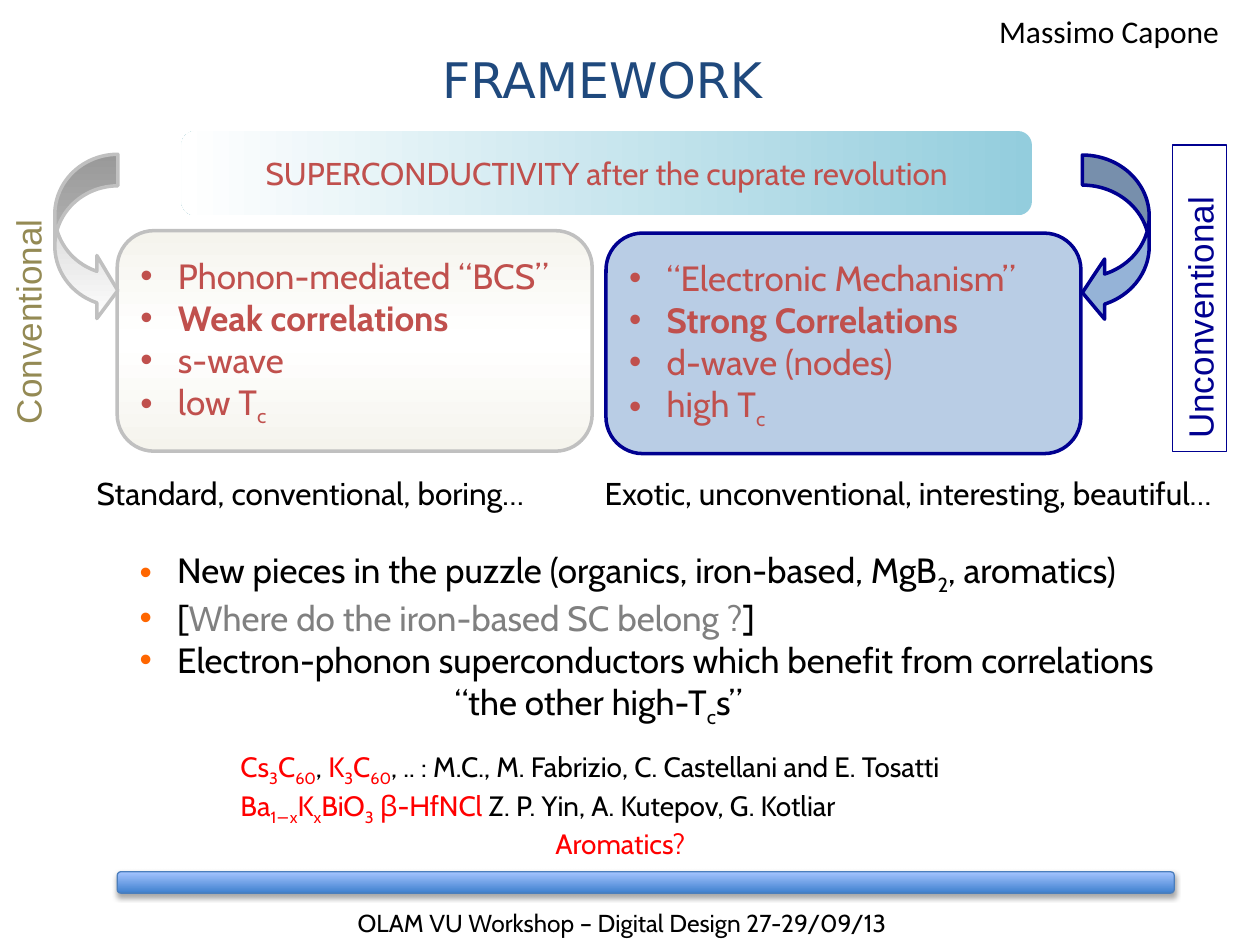
"""Build the superconductivity framework slide."""
from pptx import Presentation, oxml, util as u
from pptx.dml.color import RGBColor
from pptx.enum import shapes, text
from pptx.oxml import ns

Pt = u.Pt
KIND = shapes.MSO_SHAPE
BLACK = RGBColor(0x00, 0x00, 0x00)
WHITE = RGBColor(0xFF, 0xFF, 0xFF)
RED = RGBColor(0xFF, 0x00, 0x00)
BRICK = RGBColor(0xC0, 0x50, 0x4D)
ORANGE = RGBColor(0xFF, 0x66, 0x00)
GRAY = RGBColor(0x80, 0x80, 0x80)
SILVER = RGBColor(0xC0, 0xC0, 0xC0)
CREAM = RGBColor(0xF5, 0xF4, 0xED)
OLIVE = RGBColor(0x94, 0x8A, 0x54)
NAVY = RGBColor(0x00, 0x00, 0x90)
TITLE = RGBColor(0x1F, 0x49, 0x7D)
PALE = RGBColor(0xB9, 0xCD, 0xE5)
STEEL = RGBColor(0x95, 0xB3, 0xD7)
AQUA = RGBColor(0x93, 0xCD, 0xDD)
DEEP = RGBColor(0x3F, 0x80, 0xCE)
LIGHT = RGBColor(0xA4, 0xC4, 0xFF)
EDGE = RGBColor(0x4B, 0x7E, 0xBC)


def write(shape, lines, size=18, font="Cabin", color=BLACK, accent=RED, dot=None,
          align=text.PP_ALIGN.LEFT, anchor=text.MSO_ANCHOR.TOP, wrap=True):
    """Write lines: ~sub~, |accent|, leading * for bold, leading > for an indent."""
    frame = shape.text_frame
    frame.word_wrap, frame.vertical_anchor = wrap, anchor
    frame.auto_size = text.MSO_AUTO_SIZE.NONE if wrap else text.MSO_AUTO_SIZE.SHAPE_TO_FIT_TEXT
    for n, line in enumerate(lines):
        para = frame.add_paragraph() if n else frame.paragraphs[0]
        para.alignment = align
        props = para._p.get_or_add_pPr()
        if line.startswith(">"):
            props.set("marL", str(Pt(180)))
        elif dot:
            props.set("marL", str(Pt(21.5)))
            props.set("indent", str(-Pt(21.5)))
            for tag in (f'buClr {ns.nsdecls("a")}><a:srgbClr val="{dot}"/></a:buClr>',
                        f'buFont {ns.nsdecls("a")} typeface="Arial"/>',
                        f'buChar {ns.nsdecls("a")} char="•"/>'):
                props.append(oxml.parse_xml("<a:" + tag))
        for i, part in enumerate(line.lstrip("*>").split("|")):
            for j, bit in enumerate(part.split("~")):
                if bit:
                    run = para.add_run()
                    run.text = bit
                    run.font.size, run.font.name = Pt(size), font
                    run.font.bold = line.startswith("*")
                    run.font.color.rgb = accent if i % 2 else color
                    if j % 2:
                        run._r.get_or_add_rPr().set("baseline", "-25000")


def draw(kind, box, fill=None, angle=0, line=None, width=2, turn=0, adj=()):
    """Add a preset shape; a list of colours makes an even gradient."""
    shape = slide.shapes.add_shape(kind, *map(Pt, box))
    shape.shadow.inherit = False
    shape.rotation = turn
    for n, value in enumerate(adj):
        shape.adjustments[n] = value
    if isinstance(fill, list):
        stops = "".join(f'<a:gs pos="{100000 * n // (len(fill) - 1)}"><a:srgbClr val="{c}"/></a:gs>'
                        for n, c in enumerate(fill))
        shape._element.spPr.prstGeom.addnext(oxml.parse_xml(
            f'<a:gradFill {ns.nsdecls("a")} rotWithShape="0"><a:gsLst>{stops}</a:gsLst>'
            f'<a:lin ang="{angle * 60000}" scaled="0"/></a:gradFill>'))
    elif fill:
        shape.fill.solid()
        shape.fill.fore_color.rgb = fill
    else:
        shape.fill.background()
    if line:
        shape.line.color.rgb, shape.line.width = line, Pt(width)
    else:
        shape.line.fill.background()
    return shape


deck = Presentation()
deck.slide_width, deck.slide_height = Pt(720), Pt(540)
slide = deck.slides.add_slide(deck.slide_layouts[5])
MID = text.MSO_ANCHOR.MIDDLE

head = slide.shapes.title
head.left, head.top, head.width, head.height = map(Pt, (245.5, 15, 201.6, 60))
write(head, ["FRAMEWORK"], size=28, font="DejaVu Sans", color=TITLE, anchor=MID)

bar = draw(KIND.FLOWCHART_ALTERNATE_PROCESS, (67, 498.2, 604, 12.2), [DEEP, LIGHT], 270, EDGE, 0.75)
bar._element.spPr.find(ns.qn("a:effectLst")).append(oxml.parse_xml(
    f'<a:outerShdw {ns.nsdecls("a")} blurRad="{Pt(3.1)}" dist="{Pt(1.8)}" dir="5400000" '
    'rotWithShape="0"><a:srgbClr val="000000"><a:alpha val="35000"/></a:srgbClr></a:outerShdw>'))

banner = draw(KIND.ROUNDED_RECTANGLE, (103.7, 74.9, 486, 48.2), [AQUA, WHITE], 180)
write(banner, ["SUPERCONDUCTIVITY after the cuprate revolution"], color=BRICK,
      align=text.PP_ALIGN.CENTER, anchor=MID)

camps = [
    (67, 131.8, [CREAM, WHITE, CREAM], SILVER,
     ["Phonon-mediated “BCS”", "*Weak correlations", "s-wave", "low T~c~"]),
    (346.3, 133.2, PALE, NAVY,
     ["“Electronic Mechanism”", "*Strong Correlations", "d-wave (nodes)", "high T~c~"]),
]
for left, top, fill, line, lines in camps:
    panel = draw(KIND.ROUNDED_RECTANGLE, (left, top, 271.4, 126), fill, 90, line)
    write(panel, lines, size=20, color=BRICK, dot=BRICK, anchor=MID)

draw(KIND.CURVED_UP_ARROW, (1.4, 118.1, 95.8, 36), [SILVER, WHITE], 90, SILVER,
     turn=90, adj=(0.5, 1, 0.333))
draw(KIND.CURVED_DOWN_ARROW, (589.7, 117.4, 95.8, 38.2), STEEL, line=NAVY,
     turn=90, adj=(0.45, 0.9, 0.333))
tag = draw(KIND.RECTANGLE, (598, 154.8, 175, 31), line=NAVY, width=0.75, turn=270)
write(tag, ["Unconventional"], size=20, font="Arial", color=NAVY)

side = slide.shapes.add_textbox(*map(Pt, (-54.7, 163.5, 141, 31)))
side.rotation = 270
write(side, ["Conventional"], size=20, font="Arial", color=OLIVE)

notes = [
    ((563.8, 3.6, 141.8, 28.8), ["Massimo Capone"], dict(font="Calibri")),
    ((48.2, 267.3, 277.2, 28.8), ["Standard, conventional, boring…"], {}),
    ((338.4, 267.3, 385.2, 28.8), ["Exotic, unconventional, interesting, beautiful…"], {}),
    ((72.7, 310, 610.6, 104.4),
     ["New pieces in the puzzle (organics, iron-based, MgB~2~, aromatics)",
      "[|Where do the iron-based SC belong ?|]",
      "Electron-phonon superconductors which benefit from correlations",
      ">“the other high-T~c~s”"], dict(size=20, accent=GRAY, dot=ORANGE)),
    ((130.3, 425, 459.4, 85),
     ["|Cs~3~C~60~|, |K~3~C~60~|, .. : M.C., M. Fabrizio, C. Castellani and E. Tosatti",
      "|Ba~1−x~K~x~BiO~3~ β-HfNCl| Z. P. Yin, A. Kutepov, G. Kotliar",
      ">|Aromatics?|"], dict(size=16)),
    ((197.3, 515.5, 320.4, 24.5), ["OLAM VU Workshop – Digital Design 27-29/09/13"],
     dict(size=14)),
]
for box, lines, style in notes:
    note = slide.shapes.add_textbox(*map(Pt, box))
    write(note, lines, wrap=False, **style)

deck.save("out.pptx")
